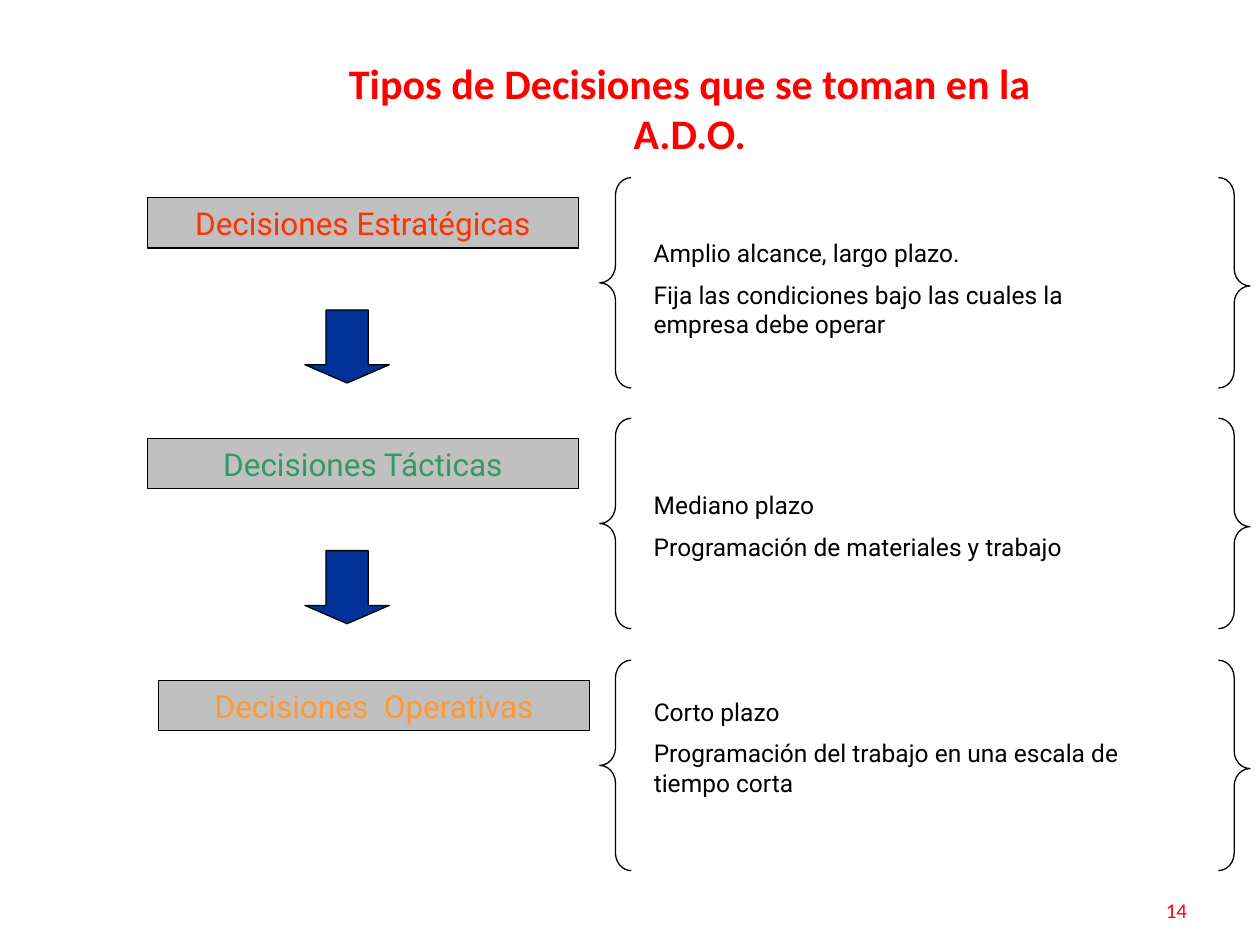
"""Build the slide on the three levels of decisions in operations management."""
from pptx import Presentation
from pptx import util as u
from pptx.dml.color import RGBColor
from pptx.enum import shapes, text

THEME = {
    "red": "FF0000", "grey": "C0C0C0", "blue": "003399", "black": "000000",
    "heading_font": "Calibri", "body_font": "Roboto",
    "title": 24, "label": 18, "detail": 14, "number": 12, "gap": 7, "line": 0.75,
}
TITLE = "Tipos de Decisiones que se toman en la A.D.O."
PAGE_NUMBER = "14"
LEVELS = [
    {"label": "Decisiones Estratégicas", "color": "FF3300", "top": 1.41,
     "label_left": 1.17, "detail_top": 1.84, "detail_size": (4.13, 0.93),
     "details": ["Amplio alcance, largo plazo.",
                 "Fija las condiciones bajo las cuales la empresa debe operar"]},
    {"label": "Decisiones Tácticas", "color": "339966", "top": 3.32,
     "label_left": 1.17, "detail_top": 3.84, "detail_size": (3.74, 0.69),
     "details": ["Mediano plazo", "Programación de materiales y trabajo"]},
    {"label": "Decisiones  Operativas", "color": "FF9933", "top": 5.24,
     "label_left": 1.26, "detail_top": 5.48, "detail_size": (4.05, 0.93),
     "details": ["Corto plazo",
                 "Programación del trabajo en una escala de tiempo corta"]},
]
BRACES = [(shapes.MSO_SHAPE.LEFT_BRACE, 4.76, 0.5),
          (shapes.MSO_SHAPE.RIGHT_BRACE, 9.67, 0.515)]


def write(box, lines, size, font, color, align, anchor, bold=False):
    frame = box.text_frame
    frame.text = "\n".join(lines)
    frame.word_wrap = True
    frame.auto_size = text.MSO_AUTO_SIZE.NONE
    frame.vertical_anchor = anchor
    for index, para in enumerate(frame.paragraphs):
        para.alignment = align
        para.space_before = u.Pt(THEME["gap"] if index else 0)
        for span in para.runs:
            span.font.size = u.Pt(THEME[size])
            span.font.name = THEME[font]
            span.font.bold = bold
            span.font.color.rgb = RGBColor.from_string(color)


def add_outlined(page, kind, left, top, width, height, fill=None):
    shape = page.shapes.add_shape(kind, *map(u.Inches, (left, top, width, height)))
    shape.shadow.inherit = False
    if fill:
        shape.fill.solid()
        shape.fill.fore_color.rgb = RGBColor.from_string(fill)
    else:
        shape.fill.background()
    shape.line.color.rgb = RGBColor.from_string(THEME["black"])
    shape.line.width = u.Pt(THEME["line"])
    return shape


def add_level(page, level, has_next):
    top = level["top"]
    label = add_outlined(page, shapes.MSO_SHAPE.RECTANGLE, level["label_left"],
                         top + 0.16, 3.42, 0.4, THEME["grey"])
    write(label, [level["label"]], "label", "body_font", level["color"],
          text.PP_ALIGN.CENTER, text.MSO_ANCHOR.MIDDLE)
    if has_next:
        add_outlined(page, shapes.MSO_SHAPE.DOWN_ARROW, 2.42, top + 1.05,
                     0.67, 0.58, THEME["blue"]).adjustments[1] = 0.25
    for kind, left, middle in BRACES:
        brace = add_outlined(page, kind, left, top, 0.25, 1.67)
        brace.adjustments[0] = 0.556
        brace.adjustments[1] = middle
    area = (5.09, level["detail_top"], *level["detail_size"])
    detail = page.shapes.add_textbox(*map(u.Inches, area))
    write(detail, level["details"], "detail", "body_font", THEME["black"],
          text.PP_ALIGN.LEFT, text.MSO_ANCHOR.TOP)


def main():
    deck = Presentation()
    deck.slide_width, deck.slide_height = u.Inches(10), u.Inches(7.5)
    page = deck.slides.add_slide(deck.slide_layouts.get_by_name("Title Only"))
    title = page.shapes.title
    title.left, title.top, title.width, title.height = map(
        u.Inches, (2.66, 0.23, 5.63, 1.25))
    write(title, [TITLE], "title", "heading_font", THEME["red"],
          text.PP_ALIGN.CENTER, text.MSO_ANCHOR.MIDDLE, bold=True)
    for level in LEVELS:
        add_level(page, level, has_next=level is not LEVELS[-1])
    number = page.shapes.add_textbox(*map(u.Inches, (7.19, 7.02, 2.33, 0.4)))
    write(number, [PAGE_NUMBER], "number", "heading_font", THEME["red"],
          text.PP_ALIGN.RIGHT, text.MSO_ANCHOR.MIDDLE)
    deck.save("out.pptx")


if __name__ == "__main__":
    main()
